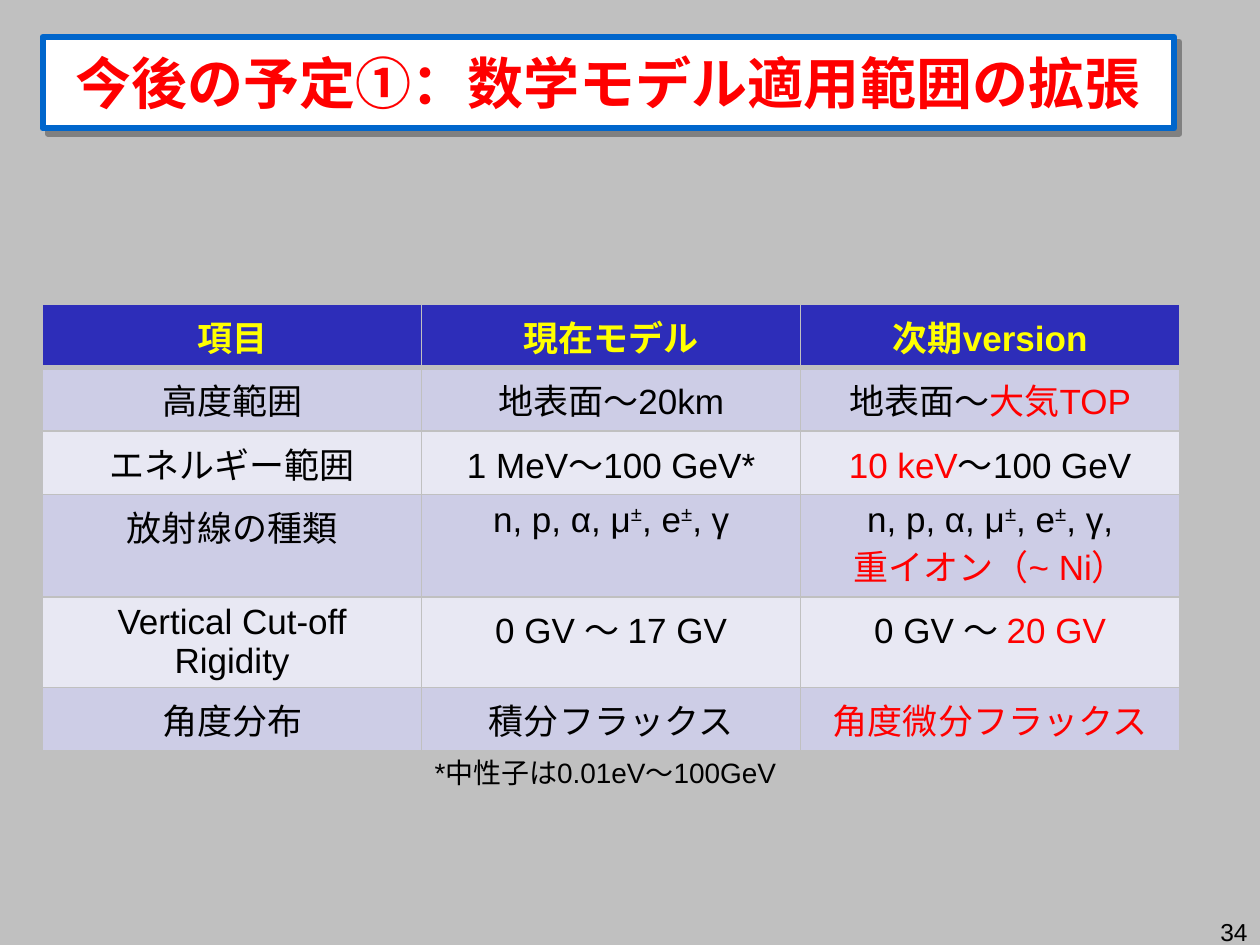
from lxml import etree
from pptx import Presentation
from pptx import util as u
from pptx.dml.color import RGBColor
from pptx.enum import shapes, text
from pptx.oxml import parse_xml
from pptx.oxml.ns import nsdecls, qn

COLORS = {
    "background": "C0C0C0", "frame": "0066CC", "shadow": "808080", "white": "FFFFFF",
    "black": "000000", "red": "FF0000", "yellow": "FFFF00",
    "header": "2D2DB9", "odd": "CDCDE6", "even": "E8E8F3",
}
RED_MARK = "|"  # text between two marks is red
ROWS = [
    ["項目", "現在モデル", "次期version"],
    ["高度範囲", "地表面～20km", "地表面～|大気TOP|"],
    ["エネルギー範囲", "1 MeV～100 GeV*", "|10 keV|～100 GeV"],
    ["放射線の種類", "n, p, α, μ±, e±, γ", "n, p, α, μ±, e±, γ,\n|重イオン（~ Ni）|"],
    ["Vertical Cut-off Rigidity", "0 GV ～ 17 GV", "0 GV ～ |20 GV|"],
    ["角度分布", "積分フラックス", "|角度微分フラックス|"],
]
ROW_HEIGHTS = [1.27, 1.27, 1.27, 1.96, 1.27, 1.27]
COLUMN_WIDTH = 7.64
LEFT = 0.86


def rgb(name):
    return RGBColor.from_string(COLORS[name])


def write(frame, content, color, alignment, **font_format):
    """Fill a text frame, with marked parts in red and each ± raised."""
    for index, line in enumerate(content.split("\n")):
        paragraph = frame.add_paragraph() if index else frame.paragraphs[0]
        paragraph.alignment = alignment
        for number, part in enumerate(line.split(RED_MARK)):
            for piece in filter(None, part.replace("±", "^±^").split("^")):
                run = paragraph.add_run()
                run.text = piece
                run.font.color.rgb = rgb("red" if number % 2 else color)
                for name, value in font_format.items():
                    setattr(run.font, name, value)
                if piece == "±":
                    run.font._element.set("baseline", "30000")


presentation = Presentation()
presentation.slide_width, presentation.slide_height = u.Cm(25.4), u.Cm(19.05)
slide = presentation.slides.add_slide(presentation.slide_layouts[5])
slide.background.fill.solid()
slide.background.fill.fore_color.rgb = rgb("background")

# Title in a rounded frame with a shadow
title = slide.shapes.title
title.left, title.top, title.width, title.height = map(u.Cm, (LEFT, 0.74, 22.81, 1.85))
properties = title._element.spPr
properties.append(parse_xml(
    f'<a:prstGeom {nsdecls("a")} prst="roundRect"><a:avLst>'
    '<a:gd name="adj" fmla="val 8100"/></a:avLst></a:prstGeom>'))
title.fill.solid()
title.fill.fore_color.rgb = rgb("white")
title.line.color.rgb = rgb("frame")
title.line.width = u.Pt(3.5)
properties.append(parse_xml(
    f'<a:effectLst {nsdecls("a")}><a:outerShdw dist="53340" dir="2700000" algn="ctr" '
    f'rotWithShape="0"><a:srgbClr val="{COLORS["shadow"]}"/></a:outerShdw></a:effectLst>'))
title_format = {
    "margin_left": u.Cm(0.4), "margin_right": u.Cm(0.4),
    "margin_top": u.Cm(0.2), "margin_bottom": u.Cm(0.2),
    "word_wrap": True, "auto_size": text.MSO_AUTO_SIZE.NONE,
    "vertical_anchor": text.MSO_ANCHOR.MIDDLE,
}
for name, value in title_format.items():
    setattr(title.text_frame, name, value)
write(title.text_frame, "今後の予定①：数学モデル適用範囲の拡張", "red", text.PP_ALIGN.CENTER,
      name="Montserrat", size=u.Pt(32), bold=True)
indents = title.text_frame.paragraphs[0]._p.get_or_add_pPr()
indents.set("marL", str(u.Cm(0.97)))
indents.set("indent", str(-u.Cm(0.97)))

# Comparison table
table = slide.shapes.add_table(
    len(ROWS), len(ROWS[0]), u.Cm(LEFT), u.Cm(6.13),
    u.Cm(COLUMN_WIDTH * len(ROWS[0])), u.Cm(sum(ROW_HEIGHTS))).table
for column in table.columns:
    column.width = u.Cm(COLUMN_WIDTH)
for row_index, contents in enumerate(ROWS):
    table.rows[row_index].height = u.Cm(ROW_HEIGHTS[row_index])
    is_header = row_index == 0
    fill = "header" if is_header else "odd" if row_index % 2 else "even"
    widths = {"lnL": 1, "lnR": 1, "lnT": 3 if row_index == 1 else 1, "lnB": 3 if is_header else 1}
    for column_index, content in enumerate(contents):
        cell = table.cell(row_index, column_index)
        write(cell.text_frame, content, "yellow" if is_header else "black",
              text.PP_ALIGN.CENTER, name="Arial", size=u.Pt(20), bold=is_header)
        cell_properties = cell._tc.get_or_add_tcPr()
        for side, points in widths.items():
            border = etree.SubElement(cell_properties, qn(f"a:{side}"), w=str(u.Pt(points)))
            line_fill = etree.SubElement(border, qn("a:solidFill"))
            etree.SubElement(line_fill, qn("a:srgbClr"), val=COLORS["background"])
        cell.fill.solid()
        cell.fill.fore_color.rgb = rgb(fill)

# Footnote and slide number
for content, box, size, alignment in [
    ("*中性子は0.01eV～100GeV", (8.51, 15.11, 7.47, 0.94), 16, text.PP_ALIGN.LEFT),
    ("34", (24.03, 18.36, 1.37, 0.69), 14, text.PP_ALIGN.RIGHT),
]:
    label = slide.shapes.add_textbox(*map(u.Cm, box))
    label.text_frame.word_wrap = True
    write(label.text_frame, content, "black", alignment, name="Arial", size=u.Pt(size))

presentation.save("out.pptx")
